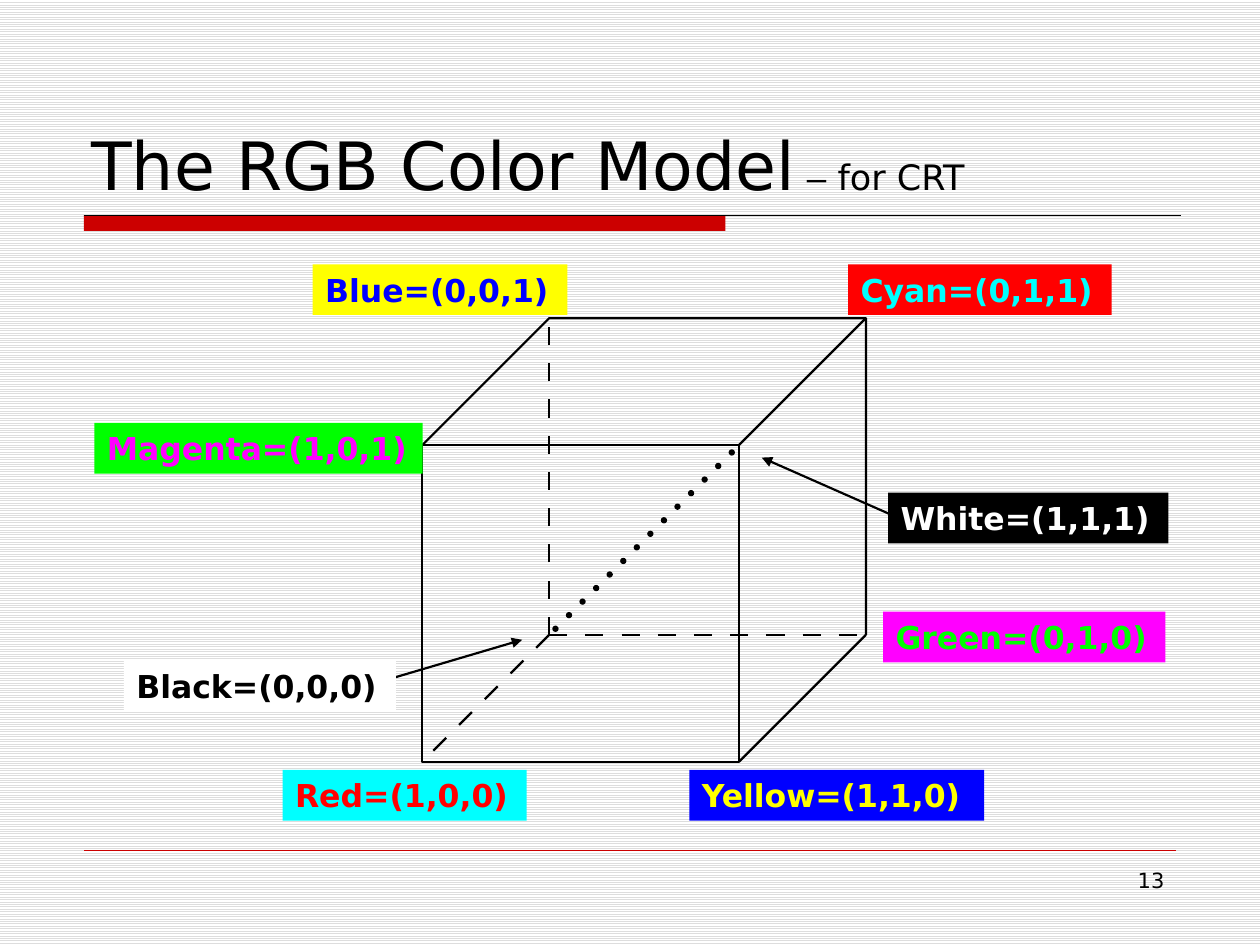
"""Build the RGB colour cube slide."""
from dataclasses import dataclass

from lxml import etree
from pptx import Presentation
from pptx import util as u
from pptx.dml.color import RGBColor
from pptx.enum import dml, shapes, text
from pptx.oxml.ns import qn


@dataclass(frozen=True)
class Theme:
    font: str = "DejaVu Sans"
    dash_font: str = "Arial"
    ink: str = "000000"
    accent: str = "CC0000"
    stripe: str = "DDDDDD"
    paper: str = "FFFFFF"
    title: float = 38
    subtitle: float = 20
    label: float = 18
    number: float = 12
    edge: float = 1.25


T = Theme()


class Deck:
    def __init__(self, prs):
        self.slide = prs.slides.add_slide(prs.slide_layouts[5])
        self.shapes = self.slide.shapes

    def background(self):
        fill = self.slide.background.fill
        fill.patterned()
        fill.pattern = dml.MSO_PATTERN.LIGHT_HORIZONTAL
        fill.fore_color.rgb = RGBColor.from_string(T.stripe)
        fill.back_color.rgb = RGBColor.from_string(T.paper)

    def run(self, p, words, size, color=T.ink, **fmt):
        r = p.add_run()
        r.text = words
        r.font.color.rgb = RGBColor.from_string(color)
        values = {"name": T.font, "size": u.Pt(size), "bold": False, **fmt}
        for key, value in values.items():
            setattr(r.font, key, value)

    def frame(self, sp, anchor, align=text.PP_ALIGN.LEFT):
        tf = sp.text_frame
        values = {"word_wrap": True, "auto_size": text.MSO_AUTO_SIZE.NONE,
                  "vertical_anchor": anchor}
        for key, value in values.items():
            setattr(tf, key, value)
        p = tf.paragraphs[0]
        p.alignment = align
        return p

    def title(self, box, runs):
        sp = self.shapes.title
        for key, value in zip(("left", "top", "width", "height"), box):
            setattr(sp, key, u.Pt(value))
        p = self.frame(sp, text.MSO_ANCHOR.BOTTOM)
        for words, size, font in runs:
            self.run(p, words, size, name=font)

    def number(self, box, words):
        sp = self.shapes.add_textbox(*map(u.Pt, box))
        p = self.frame(sp, text.MSO_ANCHOR.TOP, text.PP_ALIGN.RIGHT)
        self.run(p, words, T.number)

    def style(self, sp, fill=None, line=None):
        sp.shadow.inherit = False
        if fill:
            sp.fill.solid()
            sp.fill.fore_color.rgb = RGBColor.from_string(fill)
        else:
            sp.fill.background()
        if line:
            sp.line.color.rgb = RGBColor.from_string(line)
            sp.line.width = u.Pt(T.edge)
        else:
            sp.line.fill.background()

    def shape(self, kind, box, fill=None, line=None):
        sp = self.shapes.add_shape(kind, *map(u.Pt, box))
        self.style(sp, fill, line)
        return sp

    def rect(self, box, fill=None, line=None):
        return self.shape(shapes.MSO_SHAPE.RECTANGLE, box, fill, line)

    def label(self, words, color, fill, left, top, width):
        sp = self.rect((left, top, width, 29), fill)
        p = self.frame(sp, text.MSO_ANCHOR.MIDDLE)
        self.run(p, words, T.label, color, bold=True)

    def line(self, start, end, color=T.ink, width=T.edge, arrow=False):
        sp = self.shapes.add_connector(shapes.MSO_CONNECTOR.STRAIGHT,
                                       *map(u.Pt, (*start, *end)))
        sp.line.color.rgb = RGBColor.from_string(color)
        sp.line.width = u.Pt(width)
        if arrow:
            etree.SubElement(sp.line._ln, qn("a:tailEnd"), type="triangle")
        etree.SubElement(sp._element.spPr, qn("a:effectLst"))

    def dashes(self, start, step, count):
        (x, y), (dx, dy) = start, step
        for i in range(0, 2 * count, 2):
            self.line((x + i * dx, y + i * dy),
                      (x + (i + 1) * dx, y + (i + 1) * dy))

    def dots(self, first, step, count, size):
        x, y = first
        for i in range(count):
            box = (x + i * step - size / 2, y - i * step - size / 2, size, size)
            self.shape(shapes.MSO_SHAPE.OVAL, box, T.ink)

    def polyline(self, points):
        pts = [tuple(map(u.Pt, point)) for point in points]
        builder = self.shapes.build_freeform(*pts[0])
        builder.add_line_segments(pts[1:], close=False)
        self.style(builder.convert_to_shape(), line=T.ink)


def main():
    prs = Presentation()
    prs.slide_width, prs.slide_height = u.Pt(720), u.Pt(540)
    deck = Deck(prs)
    deck.background()
    deck.rect((48, 123, 366.5, 9), T.accent)
    deck.line((48, 123), (675, 123), width=0.75)
    deck.line((48, 486), (672, 486), T.accent, 0.25)
    deck.title((45, 24, 630, 96), [
        ("The RGB Color Model", T.title, T.font),
        (" ", T.subtitle, T.font),
        ("–", T.subtitle, T.dash_font),
        (" for CRT", T.subtitle, T.font)])

    side, depth = 181, 72.5
    left, top = 241.3, 254.3
    right, bottom = left + side, top + side
    back_left, back_right = left + depth, right + depth
    back_top, back_bottom = top - depth, bottom - depth
    origin = (back_left, back_bottom)

    for step, count in (((0, -10.35), 9), ((-7.35, 7.35), 5), ((10.35, 0), 9)):
        deck.dashes(origin, step, count)
    deck.polyline([(left, top), (back_left, back_top),
                   (back_right, back_top), (back_right, back_bottom)])
    deck.rect((left, top, side, side), line=T.ink)
    deck.line((right, top), (back_right, back_top))
    deck.line((right, bottom), (back_right, back_bottom))
    deck.dots((317.4, 359.3), 7.75, 14, 3.6)
    deck.line((508.5, 293.8), (435.3, 261.5), arrow=True)
    deck.line((226, 387), (298.4, 365.6), arrow=True)

    for label in (
            ("Black=(0,0,0)", "000000", "FFFFFF", 70.8, 377.5, 155.5),
            ("Red=(1,0,0)", "FF0000", "00FFFF", 161.5, 440, 139.5),
            ("Green=(0,1,0)", "00FF00", "FF00FF", 504.7, 349.5, 161.3),
            ("White=(1,1,1)", "FFFFFF", "000000", 507.5, 281.5, 160.2),
            ("Yellow=(1,1,0)", "FFFF00", "0000FF", 394, 440, 168.4),
            ("Cyan=(0,1,1)", "00FFFF", "FF0000", 484.7, 151, 150.5),
            ("Blue=(0,0,1)", "0000FF", "FFFF00", 178.7, 151, 145.5),
            ("Magenta=(1,0,1)", "FF00FF", "00FF00", 54, 241.7, 187.6)):
        deck.label(*label)
    deck.number((516, 492, 156.5, 37.5), "13")
    prs.save("out.pptx")


if __name__ == "__main__":
    main()
